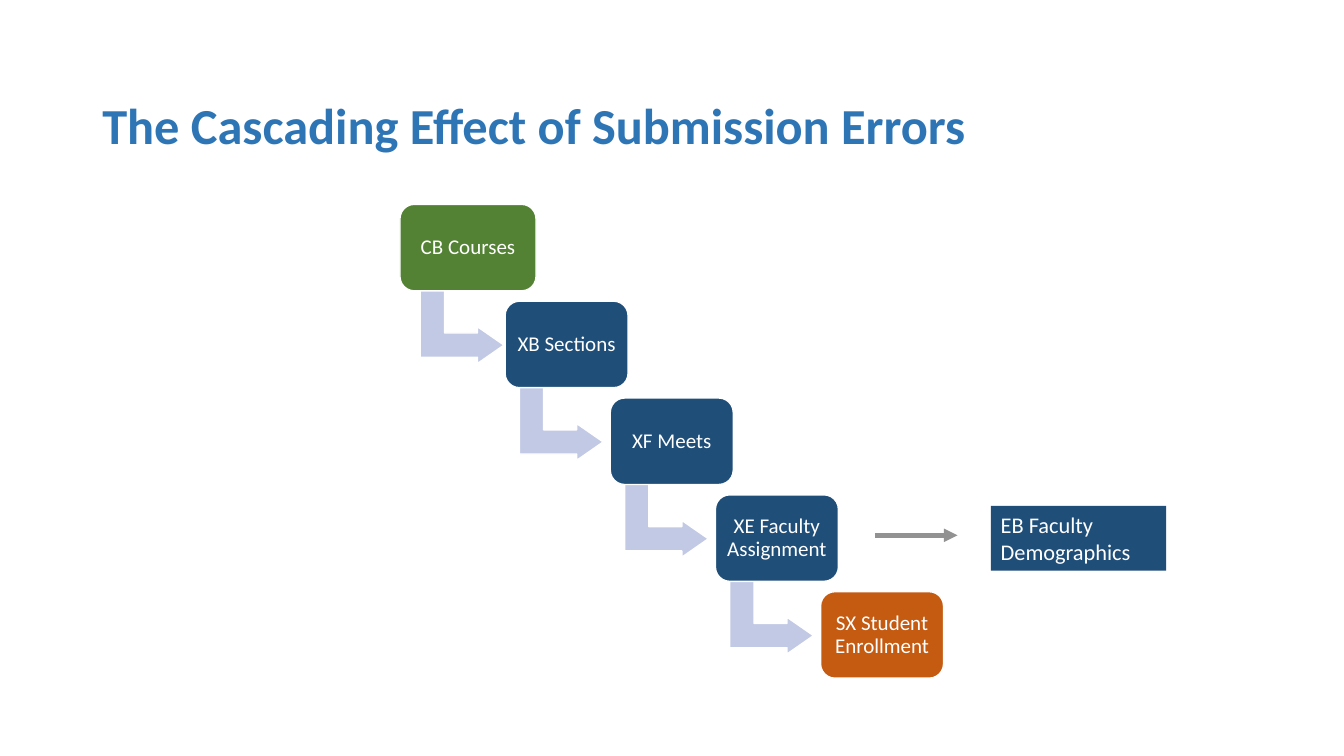
import pptx
import pptx.dml.color
import pptx.enum.shapes
import pptx.enum.text
import pptx.oxml
import pptx.oxml.ns
import pptx.util

Cm = pptx.util.Cm
Pt = pptx.util.Pt
SHAPES = pptx.enum.shapes.MSO_SHAPE
ALIGN = pptx.enum.text.PP_ALIGN
ANCHOR = pptx.enum.text.MSO_ANCHOR

WHITE, NAVY, GREEN, ORANGE = "FFFFFF", "1F4E79", "548235", "C55A11"


def paint(color_format, color):
    color_format.rgb = pptx.dml.color.RGBColor.from_string(color)


def write(shape, text, size, color, align, anchor, bold=False, spacing=None):
    """Fill the shape with one wrapped paragraph holding a single run."""
    frame = shape.text_frame
    frame.word_wrap = True
    frame.vertical_anchor = anchor
    paragraph = frame.paragraphs[0]
    paragraph.alignment = align
    paragraph.line_spacing = spacing
    run = paragraph.add_run()
    run.text = text
    run.font.name = "Calibri"
    run.font.size = Pt(size)
    run.font.bold = bold
    paint(run.font.color, color)


presentation = pptx.Presentation()
presentation.slide_width = Cm(33.87)
presentation.slide_height = Cm(19.05)
slide = presentation.slides.add_slide(presentation.slide_layouts[6])
shapes = slide.shapes

title = shapes.add_textbox(Cm(2.33), Cm(1.4), Cm(29.21), Cm(3.68))
write(title, "The Cascading Effect of Submission Errors", 36, "2E75B6",
      ALIGN.LEFT, ANCHOR.MIDDLE, bold=True, spacing=0.9)

# Cascade: each step sits one stride right of and below the previous one.
# Columns: text, fill, box width, offset of the bent arrow from the box
steps = [
    ("CB Courses", GREEN, 3.43, 0.64),
    ("XB Sections", NAVY, 3.1, 0.49),
    ("XF Meets", NAVY, 3.1, 0.49),
    ("XE Faculty Assignment", NAVY, 3.1, 0.49),
    ("SX Student Enrollment", ORANGE, 3.1, None),
]
for index, (text, color, width, arrow_offset) in enumerate(steps):
    left = 10.08 + 2.65 * index
    top = 5.15 + 2.44 * index
    pieces = []

    if arrow_offset is not None:
        arrow = shapes.add_shape(SHAPES.BENT_UP_ARROW, Cm(left + arrow_offset),
                                 Cm(top + 2.03), Cm(1.85), Cm(2.11))
        arrow.rotation = 90
        for position, value in enumerate((0.33, 0.25, 0.36)):
            arrow.adjustments[position] = value
        pieces.append((arrow, "C1C9E4"))

    box = shapes.add_shape(SHAPES.ROUNDED_RECTANGLE, Cm(left), Cm(top),
                           Cm(width), Cm(2.18))
    write(box, text, 15, WHITE, ALIGN.CENTER, ANCHOR.MIDDLE, spacing=0.9)
    # The rounded corners already inset the text, so the margins stay small
    box.text_frame.margin_left = box.text_frame.margin_right = Cm(0.05)
    pieces.append((box, color))

    for shape, fill in pieces:
        shape.shadow.inherit = False
        shape.fill.solid()
        paint(shape.fill.fore_color, fill)
        paint(shape.line.color, WHITE)
        shape.line.width = Pt(1)

demographics = shapes.add_shape(SHAPES.RECTANGLE, Cm(24.97), Cm(12.75),
                                Cm(4.42), Cm(1.63))
demographics.shadow.inherit = False
demographics.fill.solid()
paint(demographics.fill.fore_color, NAVY)
demographics.line.fill.background()
write(demographics, "EB Faculty Demographics", 16, WHITE, ALIGN.LEFT, ANCHOR.TOP)
demographics.text_frame.auto_size = pptx.enum.text.MSO_AUTO_SIZE.SHAPE_TO_FIT_TEXT

link = shapes.add_connector(pptx.enum.shapes.MSO_CONNECTOR.STRAIGHT,
                            Cm(22.05), Cm(13.49), Cm(24.13), Cm(13.49))
paint(link.line.color, "929292")
link.line.width = Pt(3.25)
namespace = pptx.oxml.ns.nsdecls("a")
link_properties = link.element.spPr
link_properties.find(pptx.oxml.ns.qn("a:ln")).append(
    pptx.oxml.parse_xml(f'<a:tailEnd {namespace} type="triangle"/>'))
link_properties.append(pptx.oxml.parse_xml(f"<a:effectLst {namespace}/>"))

presentation.save("out.pptx")
